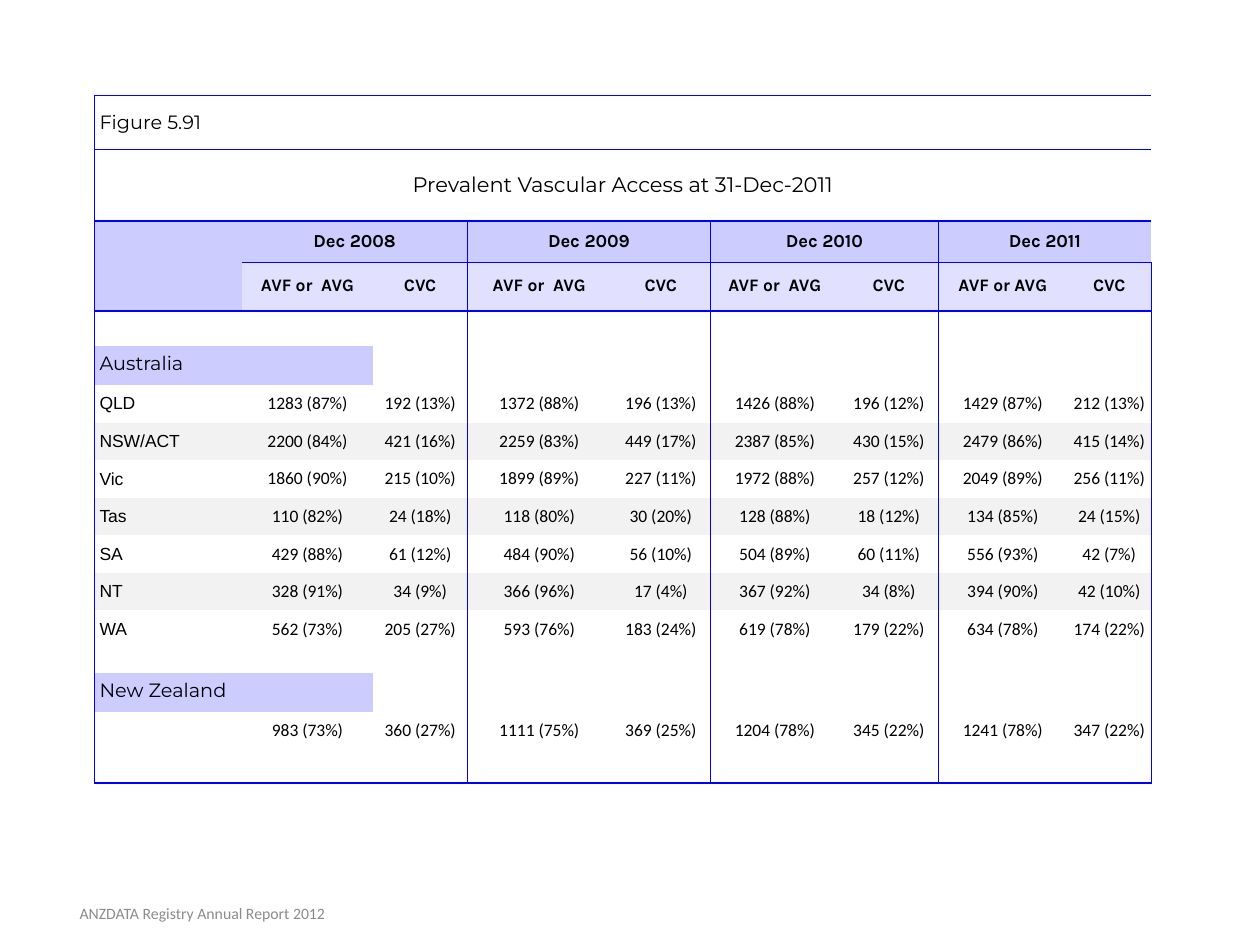
from dataclasses import dataclass

from pptx import Presentation
from pptx.dml.color import RGBColor
from pptx.enum.text import MSO_ANCHOR as Anchor, PP_ALIGN as Align
from pptx.oxml.ns import qn
from pptx.util import Inches, Pt
from lxml.etree import SubElement

BLUE, LILAC, PALE, GREY = "0000FF", "CCCCFF", "E1E1FF", "F2F2F2"
LEFT, TOP, HEIGHT = 0.75, 0.76, 5.46
COLUMNS = [1.17, 1.04, 0.75, 1.14, 0.79, 1.02, 0.79, 1.02, 0.67]
ROWS = [0.43, 0.57, 0.33, 0.39, 0.28, 0.31, *[0.3] * 7, 0.2, 0.31, 0.3, 0.27]
VERTICAL_RULES = {0: 1, 3: 0.5, 5: 0.5, 7: 0.75, 9: 1}
HORIZONTAL_RULES = {0: 1, 1: 1, 2: 1, 3: 0.5, 4: 1, 17: 1}
NO_STYLE = "{2D5ABB26-0587-4C30-8999-92F81FD0307C}"


@dataclass(frozen=True)
class Style:
    font: str
    size: float
    bold: bool = False
    align: Align = Align.CENTER
    spacing: float = 1.0
    color: str = "000000"


FIGURE = Style("Montserrat", 11, align=Align.LEFT)
TITLE = Style("Montserrat", 12)
PERIOD = Style("Karla", 10.5, bold=True)
ACCESS = Style("Karla", 10, bold=True, spacing=0.75)
COUNTRY = Style("Montserrat", 11, align=Align.LEFT, spacing=0.75)
REGION = Style("Arial", 10, align=Align.LEFT)
VALUE = Style("Calibri", 10)
FOOTER = Style("Calibri", 9, color="8C8C8C")


@dataclass(frozen=True)
class Region:
    name: str
    values: str


REGIONS = [
    Region("QLD", "1283 (87%)|192 (13%)|1372 (88%)|196 (13%)|1426 (88%)|196 (12%)|1429 (87%)|212 (13%)"),
    Region("NSW/ACT", "2200 (84%)|421 (16%)|2259 (83%)|449 (17%)|2387 (85%)|430 (15%)|2479 (86%)|415 (14%)"),
    Region("Vic", "1860 (90%)|215 (10%)|1899 (89%)|227 (11%)|1972 (88%)|257 (12%)|2049 (89%)|256 (11%)"),
    Region("Tas", "110 (82%)|24 (18%)|118 (80%)|30 (20%)|128 (88%)|18 (12%)|134 (85%)|24 (15%)"),
    Region("SA", "429 (88%)|61 (12%)|484 (90%)|56 (10%)|504 (89%)|60 (11%)|556 (93%)|42 (7%)"),
    Region("NT", "328 (91%)|34 (9%)|366 (96%)|17 (4%)|367 (92%)|34 (8%)|394 (90%)|42 (10%)"),
    Region("WA", "562 (73%)|205 (27%)|593 (76%)|183 (24%)|619 (78%)|179 (22%)|634 (78%)|174 (22%)"),
]
NEW_ZEALAND = Region("", "983 (73%)|360 (27%)|1111 (75%)|369 (25%)|1204 (78%)|345 (22%)|1241 (78%)|347 (22%)")


def rgb(color: str) -> RGBColor:
    return RGBColor.from_string(color)


def write(frame, text: str, style: Style) -> None:
    frame.text = text
    para = frame.paragraphs[0]
    para.alignment = style.align
    para.line_spacing = style.spacing
    for run in para.runs:
        run.font.name = style.font
        run.font.size = Pt(style.size)
        run.font.bold = style.bold
        run.font.color.rgb = rgb(style.color)


def draw_border(cell, side: str, width: float) -> None:
    line = SubElement(cell._tc.get_or_add_tcPr(), qn(f"a:ln{side}"), w=str(Pt(width)))
    if width:
        SubElement(SubElement(line, qn("a:solidFill")), qn("a:srgbClr"), val=BLUE)
    else:
        SubElement(line, qn("a:noFill"))


def rule_widths(row: int, column: int) -> dict[str, float]:
    """Return the border width of each side, leaving merged cells undivided."""
    verticals = {0: 1, 9: 1} if row < 2 else VERTICAL_RULES
    horizontals = dict(HORIZONTAL_RULES)
    if column == 0:
        horizontals.pop(3)
    return {
        "L": verticals.get(column, 0),
        "R": verticals.get(column + 1, 0),
        "T": horizontals.get(row, 0),
        "B": horizontals.get(row + 1, 0),
    }


def prepare_cell(cell, row: int, column: int) -> None:
    cell.margin_left = cell.margin_right = Inches(0.04)
    cell.margin_top = cell.margin_bottom = Inches(0.04)
    cell.vertical_anchor = Anchor.MIDDLE
    for side, width in rule_widths(row, column).items():
        draw_border(cell, side, width)
    cell.fill.background()
    SubElement(cell.text_frame.paragraphs[0]._p, qn("a:endParaRPr"), sz="600")


def paint(cell, color: str) -> None:
    cell.fill.solid()
    cell.fill.fore_color.rgb = rgb(color)


def add_grid(slide):
    frame = slide.shapes.add_table(
        len(ROWS), len(COLUMNS), Inches(LEFT), Inches(TOP), Inches(sum(COLUMNS)), Inches(HEIGHT)
    )
    table = frame.table
    table.first_row = table.horz_banding = False
    table._tbl.tblPr.find(qn("a:tableStyleId")).text = NO_STYLE
    for column, width in zip(table.columns, COLUMNS):
        column.width = Inches(width)
    for row, share in zip(table.rows, ROWS):
        row.height = Inches(HEIGHT * share / sum(ROWS))
    for row in range(len(ROWS)):
        for column in range(len(COLUMNS)):
            prepare_cell(table.cell(row, column), row, column)
    return table


def fill_headings(table) -> None:
    for row, text, style in [(0, "Figure 5.91", FIGURE), (1, "Prevalent Vascular Access at 31-Dec-2011", TITLE)]:
        table.cell(row, 0).merge(table.cell(row, 8))
        write(table.cell(row, 0).text_frame, text, style)
    table.cell(2, 0).merge(table.cell(3, 0))
    paint(table.cell(2, 0), LILAC)
    for column, year in zip(range(1, 9, 2), range(2008, 2012)):
        period = table.cell(2, column)
        period.merge(table.cell(2, column + 1))
        write(period.text_frame, f"Dec {year}", PERIOD)
        paint(period, LILAC)
        graft = "AVF or AVG" if year == 2011 else "AVF or  AVG"
        for offset, text in enumerate([graft, "CVC"]):
            cell = table.cell(3, column + offset)
            write(cell.text_frame, text, ACCESS)
            paint(cell, PALE)


def fill_country(table, row: int, name: str) -> None:
    cell = table.cell(row, 0)
    cell.merge(table.cell(row, 1))
    write(cell.text_frame, name, COUNTRY)
    paint(cell, LILAC)


def fill_region(table, row: int, region: Region, shaded: bool = False) -> None:
    for column, text in enumerate([region.name, *region.values.split("|")]):
        cell = table.cell(row, column)
        if text:
            write(cell.text_frame, text, VALUE if column else REGION)
        if shaded:
            paint(cell, GREY)


def main() -> None:
    deck = Presentation()
    deck.slide_width, deck.slide_height = Inches(10), Inches(7.5)
    slide = deck.slides.add_slide(deck.slide_layouts[6])
    table = add_grid(slide)
    fill_headings(table)
    fill_country(table, 5, "Australia")
    for index, region in enumerate(REGIONS):
        fill_region(table, 6 + index, region, shaded=index % 2 == 1)
    fill_country(table, 14, "New Zealand")
    fill_region(table, 15, NEW_ZEALAND)
    footer = slide.shapes.add_textbox(Inches(0.02), Inches(7.05), Inches(3.17), Inches(0.4))
    footer.text_frame.word_wrap = True
    footer.text_frame.vertical_anchor = Anchor.MIDDLE
    write(footer.text_frame, "ANZDATA Registry Annual Report 2012", FOOTER)
    deck.save("out.pptx")


if __name__ == "__main__":
    main()
